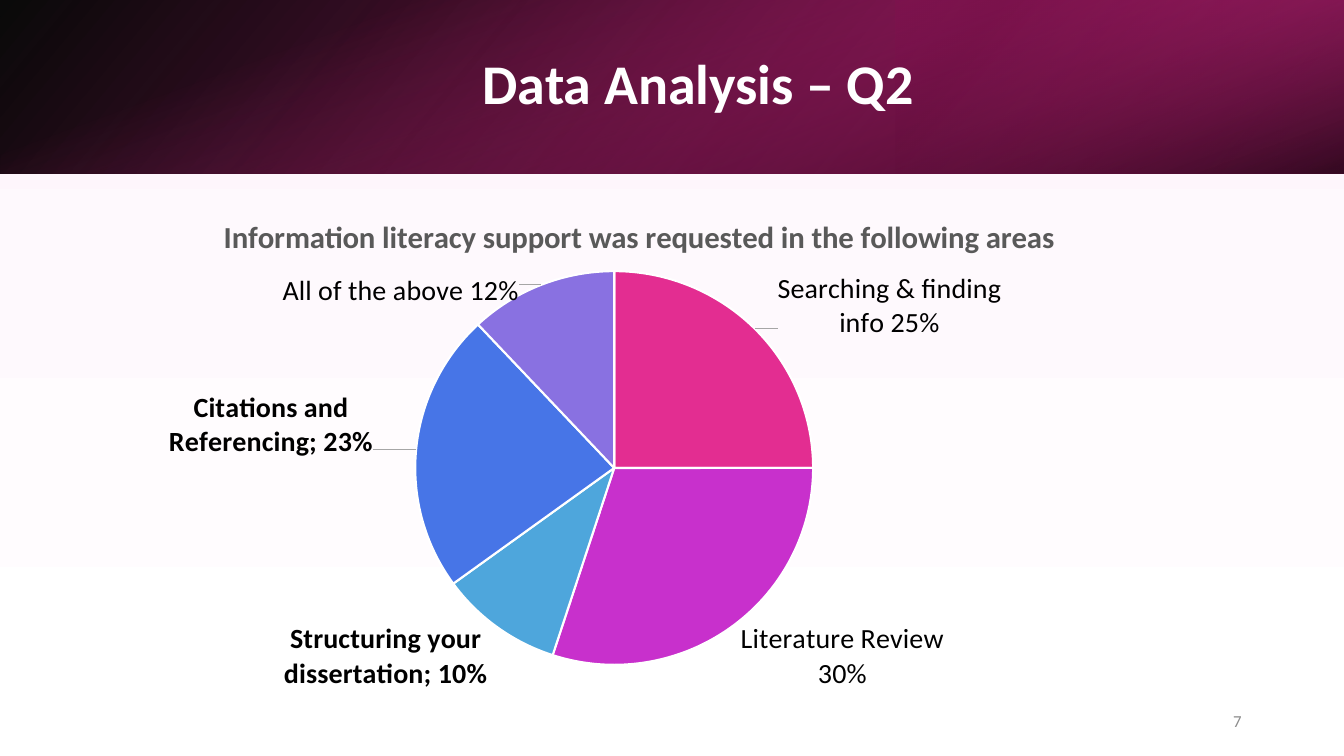
from lxml import etree
from pptx import Presentation
from pptx.chart.data import CategoryChartData
from pptx.dml.color import RGBColor
from pptx.enum import chart as ch, shapes, text
from pptx.oxml import parse_xml
from pptx.oxml.ns import nsdecls, qn
from pptx.util import Pt

FONT = "Calibri"
TITLE = "Data Analysis – Q2 "
CHART_TITLE = "Information literacy support was requested in the following areas"
PAGE_NUMBER = "7"

# left, top, width, height, rotation, flipped, angle, stops (position, colour, opacity)
HEADER_LAYERS = [
    (0, 0, 960, 124, 0, True, 140, [(0, "000000", 96), (100, "B4186E", 100)]),
    (640, 0, 320, 124, 180, True, 320, [(19, "781049", 68), (100, "E32D91", 79)]),
    (418, -418, 124, 960, 90, False, 340, [(23, "E32D91", 0), (99, "000000", 74)]),
]

# category, share, colour, custom label (or None), label shift as share of the chart
AREAS = [
    ("Searching and Finding information", 0.25, "E32D91",
     "Searching & finding info 25%", (0.015, 0.03)),
    ("Literature Review", 0.30, "C830CC", "Literature Review 30%", (0.005, -0.02)),
    ("Structuring your dissertation", 0.10, "4EA6DC", None, (-0.005, -0.02)),
    ("Citations and Referencing", 0.23, "4775E7", None, (-0.03, 0.02)),
    ("All of the above", 0.12, "8971E1", "All of the above 12%", (-0.016, 0.055)),
]


def rgb(code):
    return RGBColor.from_string(code)


def style(font, size, color, bold=False):
    font.name, font.size, font.bold = FONT, Pt(size), bold
    font.color.rgb = rgb(color)


def gradient(angle, stops):
    parts = "".join(
        f'<a:gs pos="{pos * 1000}"><a:srgbClr val="{color}">'
        f'<a:alpha val="{opacity * 1000}"/></a:srgbClr></a:gs>'
        for pos, color, opacity in stops)
    return parse_xml(
        f'<a:gradFill {nsdecls("a")} rotWithShape="1"><a:gsLst>{parts}</a:gsLst>'
        f'<a:lin ang="{angle * 60000}" scaled="0"/></a:gradFill>')


def manual_layout(x, y, w=None, h=None):
    """Chart layout in shares of the chart; with a size it holds the inner plot."""
    if w is None:
        items = [("x", x), ("y", y)]
    else:
        items = [("layoutTarget", "inner"), ("xMode", "edge"), ("yMode", "edge"),
                 ("x", x), ("y", y), ("w", w), ("h", h)]
    body = "".join(f'<c:{tag} val="{value}"/>' for tag, value in items)
    return parse_xml(f'<c:layout {nsdecls("c")}><c:manualLayout>{body}'
                     '</c:manualLayout></c:layout>')


def replace_layout(parent, layout, position):
    for old in parent.findall(qn("c:layout")):
        parent.remove(old)
    parent.insert(position, layout)


def add_header(slide):
    for left, top, width, height, turn, flipped, angle, stops in HEADER_LAYERS:
        layer = slide.shapes.add_shape(shapes.MSO_SHAPE.RECTANGLE, Pt(left), Pt(top),
                                       Pt(width), Pt(height))
        layer.shadow.inherit = False
        layer.line.fill.background()
        layer.rotation = turn
        if flipped:
            layer._element.spPr.find(qn("a:xfrm")).set("flipH", "1")
        geometry = layer._element.spPr.find(qn("a:prstGeom"))
        geometry.addnext(gradient(angle, stops))


def add_title(slide):
    title = slide.shapes.title
    title.left, title.top, title.width, title.height = Pt(108), Pt(27.4), Pt(790.6), Pt(69)
    title.text_frame.text = TITLE
    title.text_frame.vertical_anchor = text.MSO_ANCHOR.MIDDLE
    para = title.text_frame.paragraphs[0]
    para.alignment, para.line_spacing = text.PP_ALIGN.CENTER, 0.9
    style(para.runs[0].font, 40, "FFFFFF", True)
    tree = slide.shapes._spTree
    tree.remove(title._element)
    tree.append(title._element)


def add_page_number(slide):
    box = slide.shapes.add_textbox(Pt(678), Pt(500.4), Pt(216), Pt(28.8))
    box.text_frame.word_wrap = True
    box.text_frame.vertical_anchor = text.MSO_ANCHOR.MIDDLE
    box.text_frame.text = PAGE_NUMBER
    para = box.text_frame.paragraphs[0]
    para.alignment = text.PP_ALIGN.RIGHT
    style(para.runs[0].font, 12, "8C8C8C")


def add_labels(series):
    labels = series.data_labels
    labels.show_value = labels.show_category_name = True
    labels.number_format, labels.number_format_is_linked = "0%", False
    labels.position = ch.XL_LABEL_POSITION.OUTSIDE_END
    style(labels.font, 20, "000000", True)
    for index, (_, _, _, caption, shift) in enumerate(AREAS):
        label = series.points[index].data_label
        if caption:
            label.text_frame.text = caption
            style(label.text_frame.paragraphs[0].runs[0].font, 20, "000000")
        else:
            style(label.font, 20, "000000", True)
        label.position = ch.XL_LABEL_POSITION.OUTSIDE_END
    for node, area in zip(labels._element.findall(qn("c:dLbl")), AREAS):
        replace_layout(node, manual_layout(*area[4]), 1)
        node.find(qn("c:showCatName")).set("val", "1")
    leader = labels._element.find(qn("c:showLeaderLines"))
    if leader is None:
        leader = etree.SubElement(labels._element, qn("c:showLeaderLines"))
    leader.set("val", "1")
    leader.addnext(parse_xml(
        f'<c:leaderLines {nsdecls("c", "a")}><c:spPr><a:ln w="9525"><a:solidFill>'
        '<a:srgbClr val="A6A6A6"/></a:solidFill></a:ln></c:spPr></c:leaderLines>'))


def add_pie(slide):
    data = CategoryChartData(number_format="0%")
    data.categories = [area[0] for area in AREAS]
    data.add_series("Series 1", [area[1] for area in AREAS])
    chart = slide.shapes.add_chart(ch.XL_CHART_TYPE.PIE, Pt(14.4), Pt(136), Pt(884),
                                   Pt(364.4), data).chart
    chart.has_legend = False
    style(chart.font, 10, "000000")
    chart.has_title = True
    frame = chart.chart_title.text_frame
    frame.text = CHART_TITLE
    style(frame.paragraphs[0].runs[0].font, 22, "595959", True)
    title_layout = parse_xml(
        f'<c:layout {nsdecls("c")}><c:manualLayout><c:xMode val="edge"/>'
        '<c:yMode val="edge"/><c:x val="0.16"/><c:y val="0.04"/>'
        '</c:manualLayout></c:layout>')
    replace_layout(chart.chart_title._element, title_layout, 1)
    plot_area = chart._chartSpace.chart.plotArea
    replace_layout(plot_area, manual_layout(0.02, 0.16, 0.92, 0.78), 0)

    plot = chart.plots[0]
    plot.vary_by_categories = True
    series = plot.series[0]
    for index, area in enumerate(AREAS):
        slice_format = series.points[index].format
        slice_format.fill.solid()
        slice_format.fill.fore_color.rgb = rgb(area[2])
        slice_format.line.color.rgb = rgb("FFFFFF")
        slice_format.line.width = Pt(1.5)
    add_labels(series)


def main():
    deck = Presentation()
    deck.slide_width, deck.slide_height = Pt(960), Pt(540)
    slide = deck.slides.add_slide(deck.slide_layouts[5])
    fill = slide.background.fill
    fill.gradient()
    fill.gradient_angle = 270
    for stop, color in zip(fill.gradient_stops, ("FEF6FC", "FFFFFF")):
        stop.color.rgb = rgb(color)
    add_header(slide)
    add_title(slide)
    add_page_number(slide)
    add_pie(slide)
    deck.save("out.pptx")


if __name__ == "__main__":
    main()
